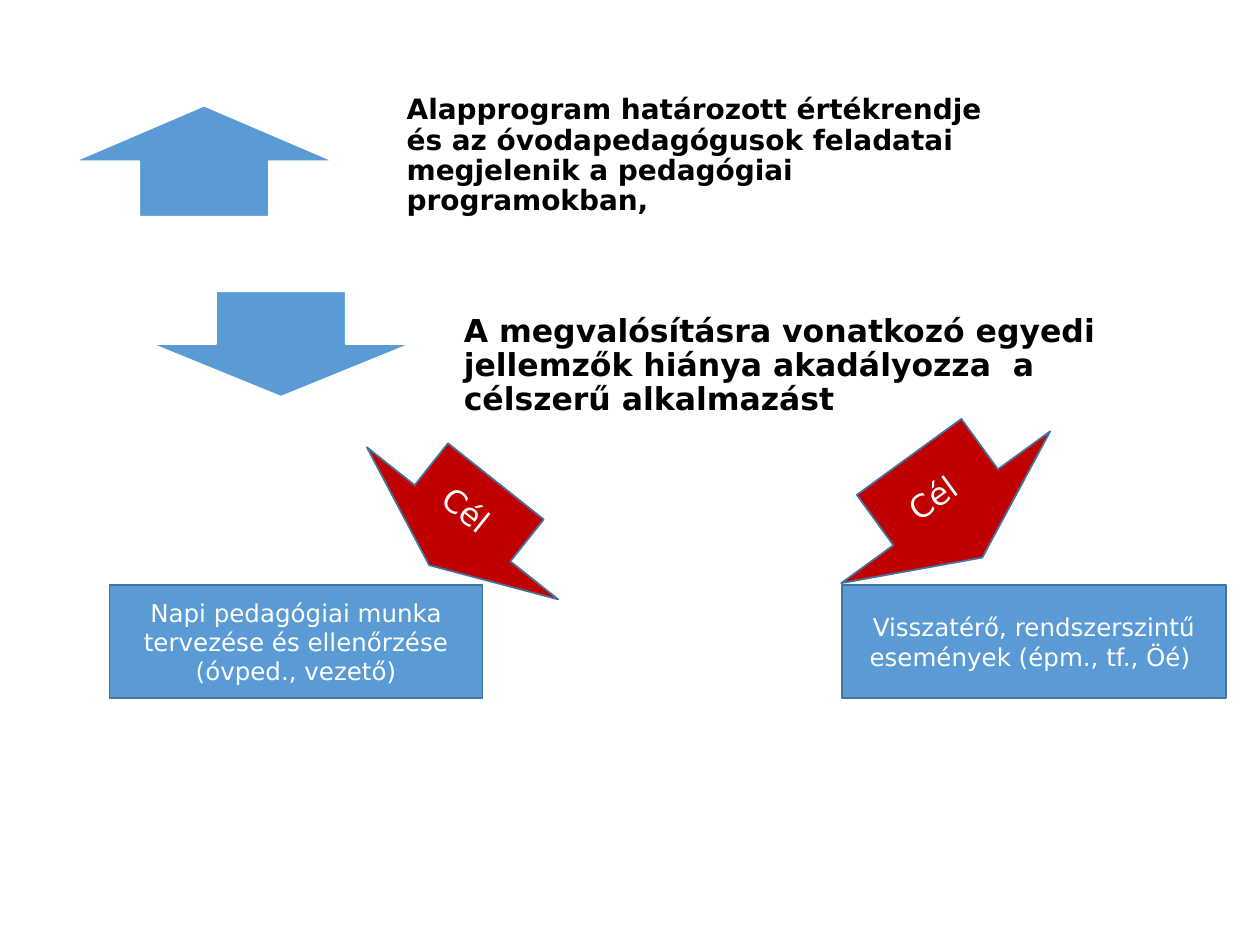
from pptx import Presentation
from pptx.dml.color import RGBColor
from pptx.enum.shapes import MSO_SHAPE
from pptx.enum.text import MSO_ANCHOR, PP_ALIGN
from pptx.util import Cm, Pt

UP = MSO_SHAPE.UP_ARROW
DOWN = MSO_SHAPE.DOWN_ARROW
RECTANGLE = MSO_SHAPE.RECTANGLE
MIDDLE = MSO_ANCHOR.MIDDLE
CENTER = PP_ALIGN.CENTER
LEFT = PP_ALIGN.LEFT

BLUE, RED, OUTLINE = "5B9BD5", "C00000", "43739E"
WHITE, BLACK = "FFFFFF", "000000"


def color(value):
    return RGBColor.from_string(value)


def write(frame, text, size=18, ink=WHITE, bold=False, align=CENTER, spacing=1.0):
    frame.word_wrap = True
    frame.vertical_anchor = MIDDLE
    paragraph = frame.paragraphs[0]
    paragraph.alignment = align
    paragraph.line_spacing = spacing
    run = paragraph.add_run()
    run.text = text
    run.font.name = "DejaVu Sans"
    run.font.size = Pt(size)
    run.font.bold = bold
    run.font.color.rgb = color(ink)


class SlideBuilder:
    def __init__(self, slide):
        self.slide = slide

    def block(self, kind, box, fill=BLUE, line=OUTLINE, rotation=0, text=None, size=18):
        shape = self.slide.shapes.add_shape(kind, *map(Cm, box))
        shape.shadow.inherit = False
        shape.rotation = rotation
        shape.fill.solid()
        shape.fill.fore_color.rgb = color(fill)
        shape.line.color.rgb = color(line)
        shape.line.width = Pt(1)
        if text:
            write(shape.text_frame, text, size=size)

    def statement(self, text, box, size, inset):
        frame = self.slide.shapes.add_textbox(*map(Cm, box)).text_frame
        frame.margin_left = frame.margin_right = frame.margin_bottom = Cm(inset)
        frame.margin_top = 0
        write(frame, text, size=size, ink=BLACK, bold=True, align=LEFT, spacing=0.9)


def main():
    deck = Presentation()
    deck.slide_width, deck.slide_height = Cm(25.4), Cm(19.05)
    builder = SlideBuilder(deck.slides.add_slide(deck.slide_layouts[6]))

    builder.block(UP, (1.5, 2.13, 5.23, 2.24), line=WHITE)
    builder.statement(
        "Alapprogram határozott értékrendje és az óvodapedagógusok feladatai "
        "megjelenik a pedagógiai programokban,",
        (7.9, 2.21, 12.55, 2.18), size=16, inset=0.3)
    builder.block(DOWN, (3.05, 5.87, 5.23, 2.13), line=WHITE)
    builder.statement(
        "A megvalósításra vonatkozó egyedi jellemzők hiánya akadályozza  a "
        "célszerű alkalmazást",
        (8.99, 6.38, 13.51, 2.36), size=18, inset=0.36)

    goal = "Cél "
    builder.block(DOWN, (6.86, 9.47, 4.93, 2.16), fill=RED, rotation=38.5, text=goal)

    activities = [
        ("Napi pedagógiai munka tervezése és ellenőrzése (óvped., vezető)", 2.21, 7.52),
        ("Visszatérő, rendszerszintű események (épm., tf., Öé) ", 16.97, 7.75),
    ]
    for activity, left, width in activities:
        builder.block(RECTANGLE, (left, 11.79, width, 2.29), text=activity, size=14)

    builder.block(DOWN, (16.46, 8.97, 5.21, 2.51), fill=RED, rotation=324, text=goal)

    deck.save("out.pptx")


if __name__ == "__main__":
    main()
